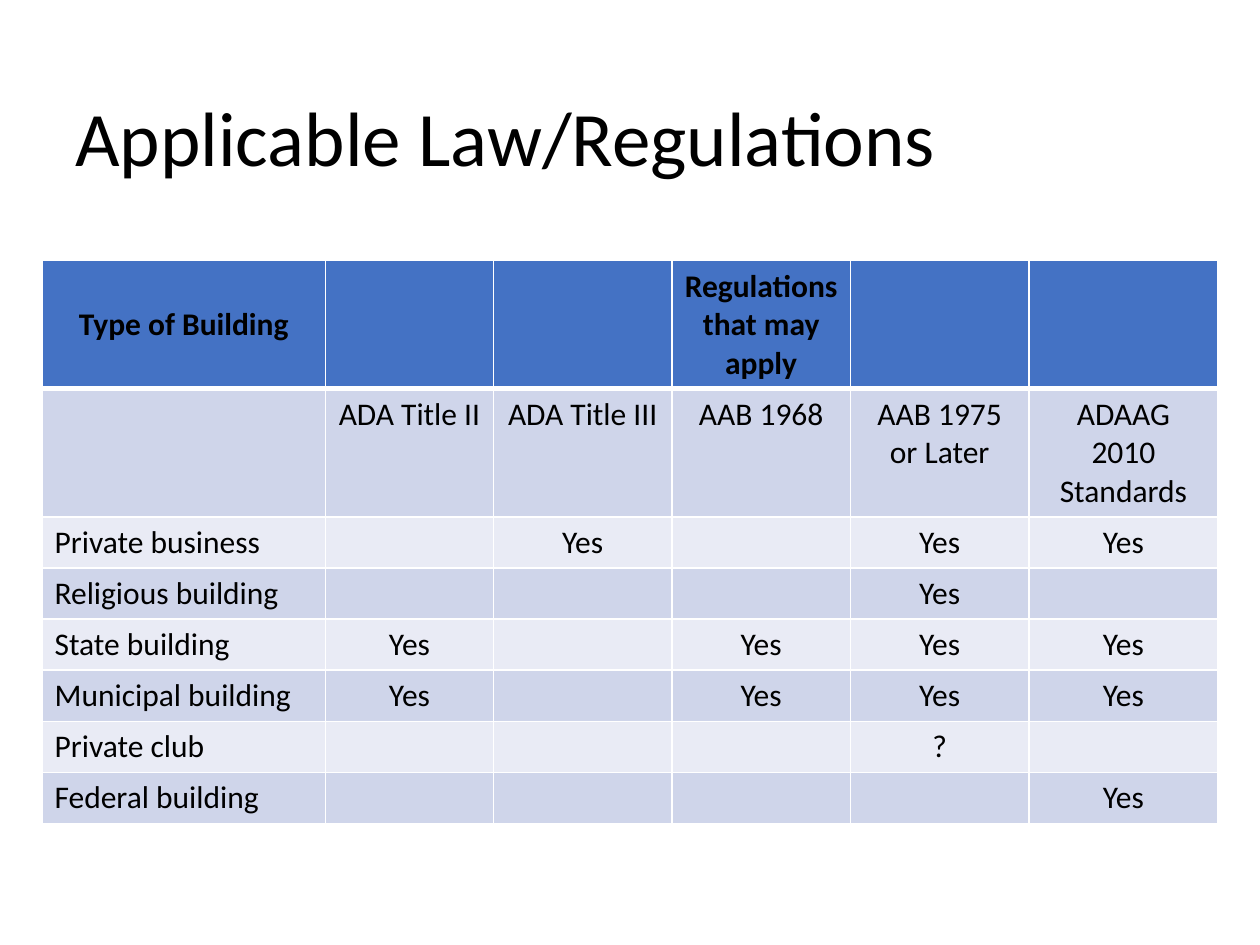
"""Build a slide with a table of the building laws that apply by building type."""
import lxml.etree
import pptx
import pptx.dml.color
import pptx.enum.text
import pptx.oxml.ns
import pptx.util

Pt = pptx.util.Pt
RGBColor = pptx.dml.color.RGBColor
ALIGN = pptx.enum.text.PP_ALIGN
ANCHOR = pptx.enum.text.MSO_ANCHOR
qn = pptx.oxml.ns.qn

BLACK = RGBColor(0x00, 0x00, 0x00)
WHITE = RGBColor(0xFF, 0xFF, 0xFF)
BLUE = RGBColor(0x44, 0x72, 0xC4)
DARK = RGBColor(0xCF, 0xD5, 0xEA)
LIGHT = RGBColor(0xE9, 0xEB, 0xF5)

ROWS = [
    ["Type of Building", "", "", "Regulations that may apply", "", ""],
    ["", "ADA Title II", "ADA Title III", "AAB 1968", "AAB 1975 or Later", "ADAAG 2010 Standards"],
    ["Private business", "", "Yes", "", "Yes", "Yes"],
    ["Religious building", "", "", "", "Yes", ""],
    ["State building", "Yes", "", "Yes", "Yes", "Yes"],
    ["Municipal building", "Yes", "", "Yes", "Yes", "Yes"],
    ["Private club", "", "", "", "?", ""],
    ["Federal building", "", "", "", "", "Yes"],
]
WIDTHS = [162, 96, 102, 102, 102, 108]
HEIGHTS = [73.2, 73.2] + [29.2] * 6


def style(para, size, bold=False):
    para.font.name = "Calibri"
    para.font.size = Pt(size)
    para.font.bold = bold
    para.font.color.rgb = BLACK


def border(cell, side, width):
    props = cell._tc.get_or_add_tcPr()
    line = lxml.etree.SubElement(props, qn("a:ln" + side), w=str(Pt(width)))
    fill = lxml.etree.SubElement(line, qn("a:solidFill"))
    lxml.etree.SubElement(fill, qn("a:srgbClr"), val=str(WHITE))


deck = pptx.Presentation()
deck.slide_width = Pt(720)
deck.slide_height = Pt(540)
slide = deck.slides.add_slide(deck.slide_layouts[6])

title = slide.shapes.add_textbox(Pt(36), Pt(36), Pt(648), Pt(90)).text_frame
title.word_wrap = True
title.vertical_anchor = ANCHOR.MIDDLE
title.text = "Applicable Law/Regulations"
title.paragraphs[0].line_spacing = 0.9
style(title.paragraphs[0], 44)

table = slide.shapes.add_table(
    len(ROWS), len(WIDTHS), Pt(24), Pt(149), Pt(sum(WIDTHS)), Pt(sum(HEIGHTS))
).table
for col, width in zip(table.columns, WIDTHS):
    col.width = Pt(width)

for r, texts in enumerate(ROWS):
    table.rows[r].height = Pt(HEIGHTS[r])
    head = r == 0
    for c, text in enumerate(texts):
        cell = table.cell(r, c)
        cell.text = text
        cell.vertical_anchor = ANCHOR.MIDDLE if head else ANCHOR.TOP
        para = cell.text_frame.paragraphs[0]
        para.alignment = ALIGN.CENTER if head or c else ALIGN.LEFT
        style(para, 18, head)
        for side in "LRTB":
            thick = (r, side) in [(0, "B"), (1, "T")]
            border(cell, side, 3 if thick else 1)
        cell.fill.solid()
        cell.fill.fore_color.rgb = BLUE if head else DARK if r % 2 else LIGHT

deck.save("out.pptx")
